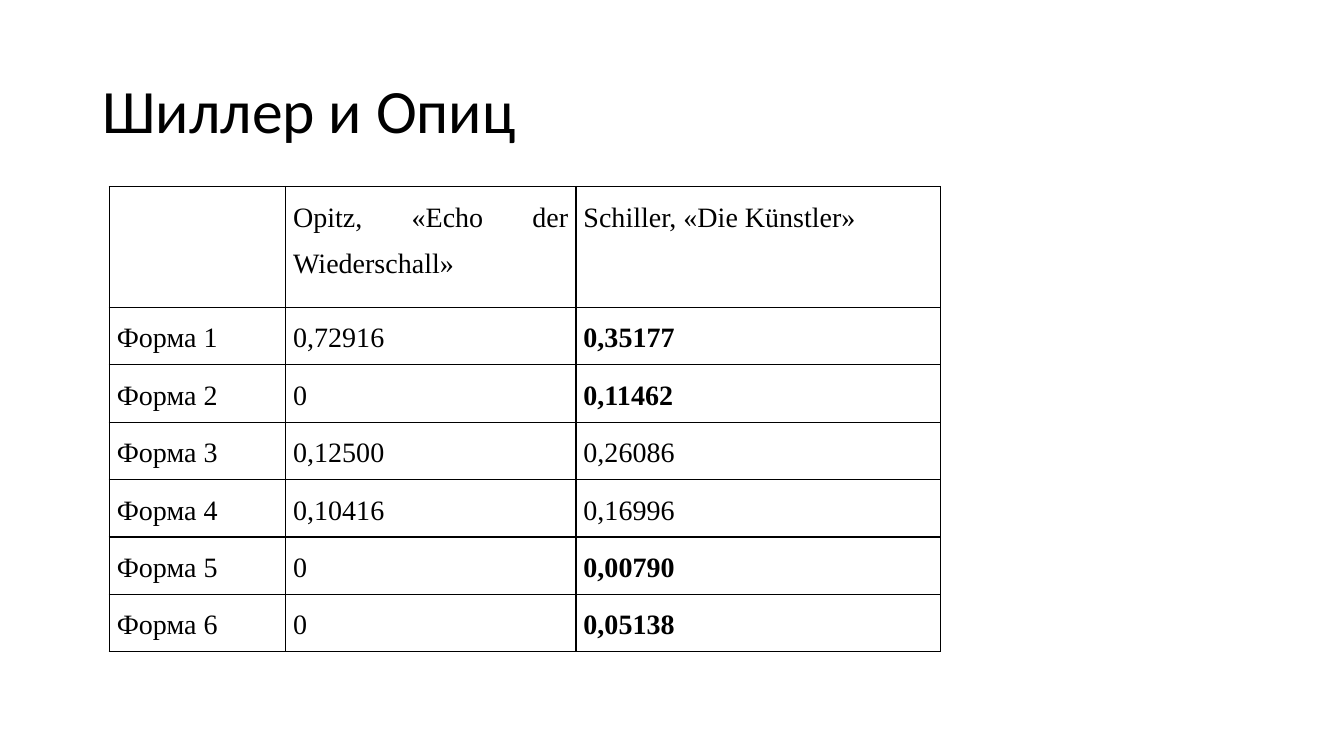
from lxml import etree
from pptx import Presentation
from pptx.dml.color import RGBColor
from pptx.enum import text
from pptx.oxml import ns
from pptx.util import Pt

COLORS = {"ink": "000000", "paper": "FFFFFF"}
COLUMN_WIDTHS = [126, 207.4, 260.6]
HEADER_HEIGHT, ROW_HEIGHT = 86.4, 41
HEADER = ["", "Opitz, «Echo der Wiederschall»", "Schiller, «Die Künstler»"]
FORMS = [
    ("0,72916", "0,35177"),
    ("0", "0,11462"),
    ("0,12500", "0,26086"),
    ("0,10416", "0,16996"),
    ("0", "0,00790"),
    ("0", "0,05138"),
]
BOLD_VALUES = {"0,35177", "0,11462", "0,00790", "0,05138"}


def style_paragraph(p, font, size, align, spacing, bold=False):
    p.alignment = align
    p.line_spacing = spacing
    p.font.name = font
    p.font.size = Pt(size)
    p.font.bold = bold
    p.font.color.rgb = RGBColor.from_string(COLORS["ink"])


def add_title(s, words):
    sp = s.shapes.title
    sp.left, sp.top, sp.width, sp.height = Pt(66), Pt(28.8), Pt(828), Pt(104.4)
    tf = sp.text_frame
    tf.text = words
    tf.auto_size = text.MSO_AUTO_SIZE.NONE
    tf.vertical_anchor = text.MSO_ANCHOR.MIDDLE
    style_paragraph(tf.paragraphs[0], "Calibri", 44, text.PP_ALIGN.LEFT, 0.9)


def add_borders(cell):
    tc_pr = cell._tc.get_or_add_tcPr()
    for side in "LRTB":
        line = etree.SubElement(tc_pr, ns.qn(f"a:ln{side}"), w=str(Pt(1)))
        fill = etree.SubElement(line, ns.qn("a:solidFill"))
        etree.SubElement(fill, ns.qn("a:srgbClr"), val=COLORS["ink"])


def fill_cell(cell, words):
    cell.margin_left = cell.margin_right = Pt(5.4)
    cell.margin_top = cell.margin_bottom = Pt(0)
    add_borders(cell)
    cell.fill.background()
    cell.text = words
    style_paragraph(cell.text_frame.paragraphs[0], "Times New Roman", 20,
                    text.PP_ALIGN.JUSTIFY, 1.5, words in BOLD_VALUES)


def add_forms_table(s):
    rows = [HEADER] + [(f"Форма {n}", *values)
                       for n, values in enumerate(FORMS, 1)]
    heights = [HEADER_HEIGHT] + [ROW_HEIGHT] * len(FORMS)
    table = s.shapes.add_table(len(rows), len(HEADER), Pt(78), Pt(133.2),
                               Pt(sum(COLUMN_WIDTHS)), Pt(sum(heights))).table
    table.first_row = table.horz_banding = False
    for column, width in zip(table.columns, COLUMN_WIDTHS):
        column.width = Pt(width)
    for row, height, values in zip(table.rows, heights, rows):
        row.height = Pt(height)
        for cell, words in zip(row.cells, values):
            fill_cell(cell, words)


def main():
    prs = Presentation()
    prs.slide_width, prs.slide_height = Pt(960), Pt(540)
    s = prs.slides.add_slide(prs.slide_layouts[5])
    s.background.fill.solid()
    s.background.fill.fore_color.rgb = RGBColor.from_string(COLORS["paper"])
    add_title(s, "Шиллер и Опиц")
    add_forms_table(s)
    prs.save("out.pptx")


if __name__ == "__main__":
    main()
